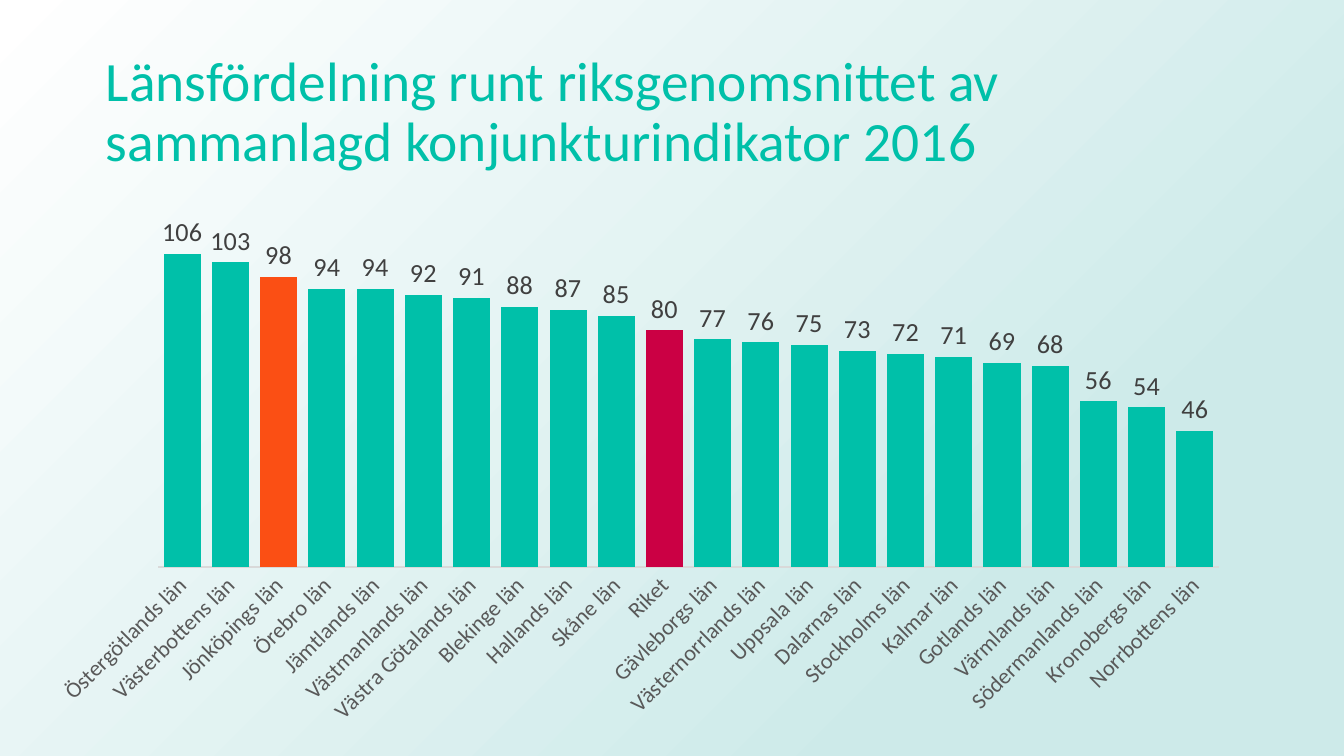
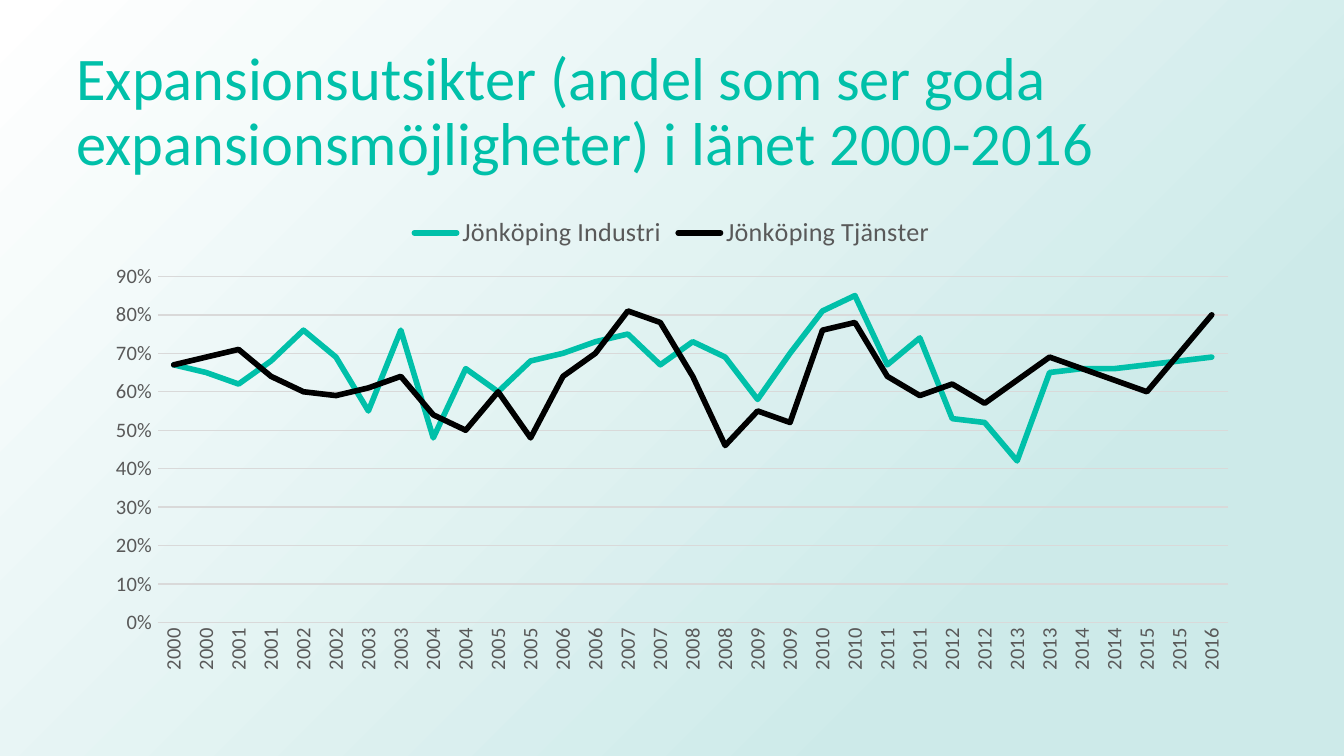
from dataclasses import dataclass

import pptx
import pptx.chart.data
import pptx.dml.color
import pptx.enum.chart
import pptx.enum.shapes
import pptx.enum.text
import pptx.oxml
import pptx.oxml.ns
import pptx.util

Pt = pptx.util.Pt
RGBColor = pptx.dml.color.RGBColor
XL = pptx.enum.chart

# Shared look
TEAL = RGBColor(0x00, 0xC0, 0xA9)
ORANGE = RGBColor(0xFB, 0x4F, 0x14)
CRIMSON = RGBColor(0xCB, 0x00, 0x44)
BLACK = RGBColor(0x00, 0x00, 0x00)
LABEL_GREY = RGBColor(0x40, 0x40, 0x40)
AXIS_GREY = RGBColor(0x59, 0x59, 0x59)
RULE_GREY = RGBColor(0xD9, 0xD9, 0xD9)
MINT = RGBColor(0xCD, 0xEA, 0xE9)
WHITE = RGBColor(0xFF, 0xFF, 0xFF)
FONT = "Calibri"
SLIDE_WIDTH, SLIDE_HEIGHT = Pt(720), Pt(405)

GRADIENT = (
    f'<a:gradFill {pptx.oxml.ns.nsdecls("a")} rotWithShape="1"><a:gsLst>'
    f'<a:gs pos="23000"><a:srgbClr val="{MINT}"/></a:gs>'
    f'<a:gs pos="100000"><a:srgbClr val="{WHITE}"/></a:gs></a:gsLst>'
    '<a:path path="circle"><a:fillToRect l="100000" t="100000"/></a:path>'
    "</a:gradFill>"
)

# Slide 1 data
COUNTY_INDEX = {
    "Östergötlands län": 106, "Västerbottens län": 103, "Jönköpings län": 98,
    "Örebro län": 94, "Jämtlands län": 94, "Västmanlands län": 92,
    "Västra Götalands län": 91, "Blekinge län": 88, "Hallands län": 87,
    "Skåne län": 85, "Riket": 80, "Gävleborgs län": 77,
    "Västernorrlands län": 76, "Uppsala län": 75, "Dalarnas län": 73,
    "Stockholms län": 72, "Kalmar län": 71, "Gotlands län": 69,
    "Värmlands län": 68, "Södermanlands län": 56, "Kronobergs län": 54,
    "Norrbottens län": 46,
}
HIGHLIGHTS = {"Jönköpings län": ORANGE, "Riket": CRIMSON}

# Slide 2 data: two surveys a year, one in the last year
SURVEY_YEARS = [str(2000 + survey // 2) for survey in range(33)]
INDUSTRY = [67, 65, 62, 68, 76, 69, 55, 76, 48, 66, 60, 68, 70, 73, 75, 67, 73,
            69, 58, 70, 81, 85, 67, 74, 53, 52, 42, 65, 66, 66, 67, 68, 69]
SERVICES = [67, 69, 71, 64, 60, 59, 61, 64, 54, 50, 60, 48, 64, 70, 81, 78, 64,
            46, 55, 52, 76, 78, 64, 59, 62, 57, 63, 69, 66, 63, 60, 70, 80]


@dataclass
class Box:
    left: float
    top: float
    width: float
    height: float

    def lengths(self) -> list[int]:
        return [Pt(n) for n in (self.left, self.top, self.width, self.height)]


@dataclass
class Title:
    text: str
    box: Box
    size: float


@dataclass
class Line:
    name: str
    percents: list[int]
    color: RGBColor


LINES = [Line("Jönköping Industri", INDUSTRY, TEAL),
         Line("Jönköping Tjänster", SERVICES, BLACK)]


def style_font(font, size: float, color: RGBColor) -> None:
    font.name = FONT
    font.size = Pt(size)
    font.color.rgb = color


def add_titled_slide(deck, title: Title):
    """Add a slide with the gradient backdrop and its title."""
    slide = deck.slides.add_slide(deck.slide_layouts[6])
    backdrop = slide.shapes.add_shape(
        pptx.enum.shapes.MSO_SHAPE.RECTANGLE, 0, 0, SLIDE_WIDTH, SLIDE_HEIGHT)
    backdrop.shadow.inherit = False
    backdrop.line.fill.background()
    backdrop.element.spPr.find(pptx.oxml.ns.qn("a:prstGeom")).addnext(
        pptx.oxml.parse_xml(GRADIENT))

    frame = slide.shapes.add_textbox(*title.box.lengths()).text_frame
    frame.word_wrap = True
    frame.vertical_anchor = pptx.enum.text.MSO_ANCHOR.MIDDLE
    frame.text = title.text
    heading = frame.paragraphs[0]
    heading.line_spacing = 0.9
    style_font(heading.runs[0].font, title.size, TEAL)
    return slide


def add_chart(slide, kind, box: Box, data):
    chart = slide.shapes.add_chart(kind, *box.lengths(), data).chart
    style_font(chart.font, 10, BLACK)
    chart.has_title = False
    chart.has_legend = False
    chart.plots[0].vary_by_categories = False
    return chart


def style_category_axis(axis, size: float, degrees: int) -> None:
    axis.major_tick_mark = XL.XL_TICK_MARK.NONE
    axis.format.line.color.rgb = RULE_GREY
    axis.format.line.width = Pt(0.75)
    style_font(axis.tick_labels.font, size, AXIS_GREY)
    label_body = axis._element.find(".//" + pptx.oxml.ns.qn("a:bodyPr"))
    label_body.set("rot", str(degrees * 60000))
    label_body.set("vert", "horz")


def scale_axis(axis, top: float, step: float) -> None:
    axis.minimum_scale, axis.maximum_scale, axis.major_unit = 0, top, step


def add_county_slide(deck) -> None:
    slide = add_titled_slide(deck, Title(
        "Länsfördelning runt riksgenomsnittet av sammanlagd konjunkturindikator 2016",
        Box(49.7, 21.6, 620.6, 78.5), 29.7))
    data = pptx.chart.data.CategoryChartData(number_format="0")
    data.categories = list(COUNTY_INDEX)
    data.add_series("Series 1", list(COUNTY_INDEX.values()))
    chart = add_chart(slide, XL.XL_CHART_TYPE.COLUMN_CLUSTERED,
                      Box(18.7, 108, 647.3, 285.8), data)
    style_category_axis(chart.category_axis, 12, -45)
    scale_axis(chart.value_axis, 120, 20)
    chart.value_axis.has_major_gridlines = False
    chart.value_axis.visible = False

    # Columns, with the county and the national average picked out
    plot = chart.plots[0]
    plot.gap_width = 30
    columns = plot.series[0]
    columns.format.fill.solid()
    columns.format.fill.fore_color.rgb = TEAL
    for position, county in enumerate(COUNTY_INDEX):
        if county in HIGHLIGHTS:
            fill = columns.points[position].format.fill
            fill.solid()
            fill.fore_color.rgb = HIGHLIGHTS[county]

    labels = columns.data_labels
    labels.show_value = True
    labels.number_format = "0"
    labels.number_format_is_linked = False
    labels.position = XL.XL_LABEL_POSITION.OUTSIDE_END
    style_font(labels.font, 14, LABEL_GREY)


def add_expansion_slide(deck) -> None:
    slide = add_titled_slide(deck, Title(
        "Expansionsutsikter (andel som ser goda expansionsmöjligheter) i länet 2000-2016",
        Box(33.8, 21.6, 637.2, 78.5), 32.4))
    data = pptx.chart.data.CategoryChartData(number_format="0%")
    data.categories = SURVEY_YEARS
    for line in LINES:
        data.add_series(line.name, [percent / 100 for percent in line.percents])
    chart = add_chart(slide, XL.XL_CHART_TYPE.LINE,
                      Box(49.7, 108, 620.6, 256.3), data)
    style_category_axis(chart.category_axis, 11, -90)

    # Percent axis
    percent_axis = chart.value_axis
    scale_axis(percent_axis, 0.9, 0.1)
    percent_axis.major_tick_mark = XL.XL_TICK_MARK.NONE
    percent_axis.format.line.fill.background()
    percent_axis.major_gridlines.format.line.color.rgb = RULE_GREY
    percent_axis.major_gridlines.format.line.width = Pt(0.75)
    percent_axis.tick_labels.number_format = "0%"
    percent_axis.tick_labels.number_format_is_linked = False
    style_font(percent_axis.tick_labels.font, 11, AXIS_GREY)

    # Legend and lines
    chart.has_legend = True
    chart.legend.position = XL.XL_LEGEND_POSITION.TOP
    chart.legend.include_in_layout = False
    style_font(chart.legend.font, 14, AXIS_GREY)
    for series, line in zip(chart.plots[0].series, LINES):
        series.smooth = False
        series.marker.style = XL.XL_MARKER_STYLE.NONE
        series.format.line.color.rgb = line.color
        series.format.line.width = Pt(3)
        series._element.spPr.find(pptx.oxml.ns.qn("a:ln")).set("cap", "rnd")


def main() -> None:
    deck = pptx.Presentation()
    deck.slide_width, deck.slide_height = SLIDE_WIDTH, SLIDE_HEIGHT
    add_county_slide(deck)
    add_expansion_slide(deck)
    deck.save("out.pptx")


if __name__ == "__main__":
    main()
